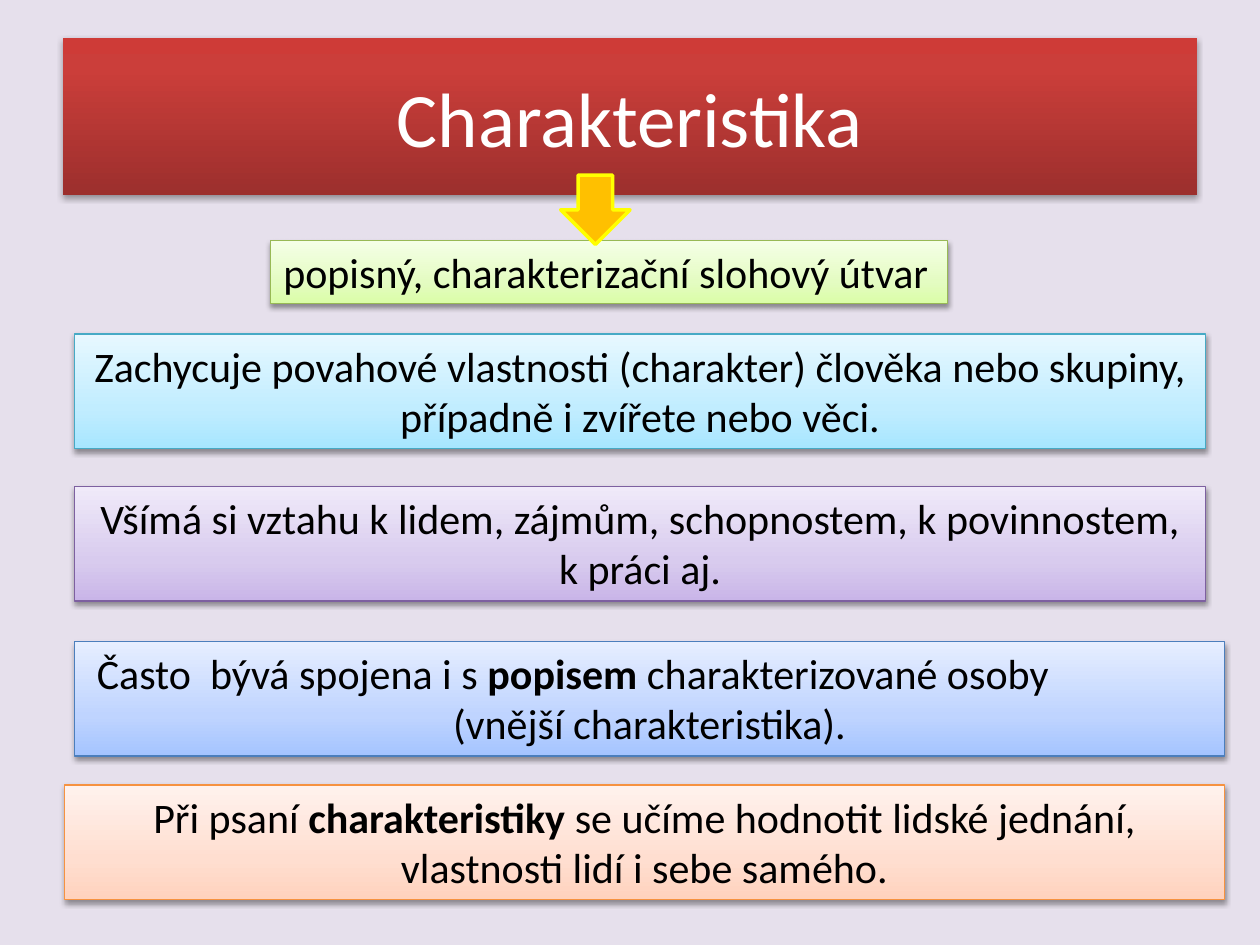
from lxml.etree import SubElement
from pptx import Presentation
from pptx.dml.color import RGBColor
from pptx.enum.shapes import MSO_SHAPE
from pptx.enum.text import MSO_ANCHOR, PP_ALIGN
from pptx.oxml import parse_xml
from pptx.oxml.ns import nsdecls, qn
from pptx.util import Inches, Pt

BOX_H = 0.91
LEFT = 0.59


def color(value):
    return RGBColor.from_string(value)


def place(s, left, top, width, height):
    box = dict(left=left, top=top, width=width, height=height)
    for name, value in box.items():
        setattr(s, name, Inches(value))


def gradient(s, stops):
    """Fill from bottom to top; stops are (percent, colour) pairs."""
    gs = "".join(
        f'<a:gs pos="{pos * 1000}"><a:srgbClr val="{value}"/></a:gs>'
        for pos, value in stops)
    s.element.spPr.append(parse_xml(
        f'<a:gradFill {nsdecls("a")} rotWithShape="1"><a:gsLst>{gs}</a:gsLst>'
        '<a:lin ang="16200000" scaled="0"/></a:gradFill>'))


def outline(s, value, width):
    s.line.color.rgb = color(value)
    s.line.width = Pt(width)


def shadow(s, distance, opacity):
    s.shadow.inherit = False
    effects = s.element.spPr.find(qn("a:effectLst"))
    outer = SubElement(effects, qn("a:outerShdw"), blurRad=str(Pt(3.1)),
                       dist=str(Pt(distance)), dir="5400000", rotWithShape="0")
    black = SubElement(outer, qn("a:srgbClr"), val="000000")
    SubElement(black, qn("a:alpha"), val=str(opacity * 1000))


def write(p, runs, size=24, value="000000", align=PP_ALIGN.CENTER):
    """Add runs to a paragraph, every second one bold."""
    p.alignment = align
    for i, text in enumerate(runs):
        r = p.add_run()
        r.text = text
        font = dict(name="Calibri", size=Pt(size), bold=i % 2 == 1)
        for name, setting in font.items():
            setattr(r.font, name, setting)
        r.font.color.rgb = color(value)


def add_title(slide, text):
    s = slide.shapes.title
    place(s, 0.5, 0.3, 9, 1.25)
    gradient(s, [(0, "9C2F2D"), (80, "CB3E3A"), (100, "CE3B37")])
    shadow(s, 1.8, 35)
    s.text_frame.vertical_anchor = MSO_ANCHOR.MIDDLE
    write(s.text_frame.paragraphs[0], [text], 44, "FFFFFF")


def add_box(slide, at, colors, line, runs, wrap=True):
    s = slide.shapes.add_shape(MSO_SHAPE.RECTANGLE, 0, 0, 0, 0)
    place(s, *at)
    gradient(s, zip((0, 35, 100), colors))
    outline(s, line, 0.75)
    shadow(s, 1.6, 38)
    tf = s.text_frame
    tf.word_wrap = wrap
    tf.vertical_anchor = MSO_ANCHOR.TOP
    write(tf.paragraphs[0], runs,
          align=PP_ALIGN.CENTER if wrap else PP_ALIGN.LEFT)
    return tf


def add_arrow(slide):
    s = slide.shapes.add_shape(MSO_SHAPE.DOWN_ARROW, 0, 0, 0, 0)
    place(s, 4.45, 1.39, 0.55, 0.55)
    s.fill.solid()
    s.fill.fore_color.rgb = color("FFC000")
    outline(s, "FFFF00", 2)
    s.shadow.inherit = False


def main():
    prs = Presentation()
    prs.slide_width, prs.slide_height = Inches(10), Inches(7.5)
    slide = prs.slides.add_slide(prs.slide_layouts[5])
    slide.background.fill.solid()
    slide.background.fill.fore_color.rgb = color("E6E0EC")

    add_title(slide, "Charakteristika")

    # Definition
    add_box(slide, (2.15, 1.91, 5.37, 0.5), ("DAFDA7", "E4FCC2", "F5FFE7"),
            "98B955", ["popisný, charakterizační slohový útvar"], wrap=False)

    # Features
    add_box(slide, (LEFT, 2.65, 8.98, BOX_H), ("A7E6FF", "C1EDFF", "E7F8FF"),
            "46AAC5", ["Zachycuje povahové vlastnosti (charakter) člověka "
                       "nebo skupiny, případně i zvířete nebo věci."])
    add_box(slide, (LEFT, 3.86, 8.98, BOX_H), ("C9B5E8", "D8CBEE", "F0EAF9"),
            "7D60A0", ["Všímá si vztahu k lidem, zájmům, schopnostem, "
                       "k povinnostem, k práci aj."])
    add_box(slide, (0.51, 6.23, 9.21, BOX_H), ("FFD2BD", "FFDED0", "FFF2ED"),
            "F69240", ["Při psaní ", "charakteristiky",
                       " se učíme hodnotit lidské jednání, "
                       "vlastnosti lidí i sebe samého."])

    # Link to description: first line at the left, second one centred
    tf = add_box(slide, (LEFT, 5.09, 9.13, BOX_H),
                 ("A4C4FF", "BFD4FF", "E6EEFF"), "4B7EBC",
                 ["Často  bývá spojena i s ", "popisem",
                  " charakterizované osoby"])
    first = tf.paragraphs[0]
    first.alignment = PP_ALIGN.LEFT
    first._p.get_or_add_pPr().set("marL", str(Inches(0.08)))
    write(tf.add_paragraph(), ["(vnější charakteristika)."])

    add_arrow(slide)
    prs.save("out.pptx")


if __name__ == "__main__":
    main()
